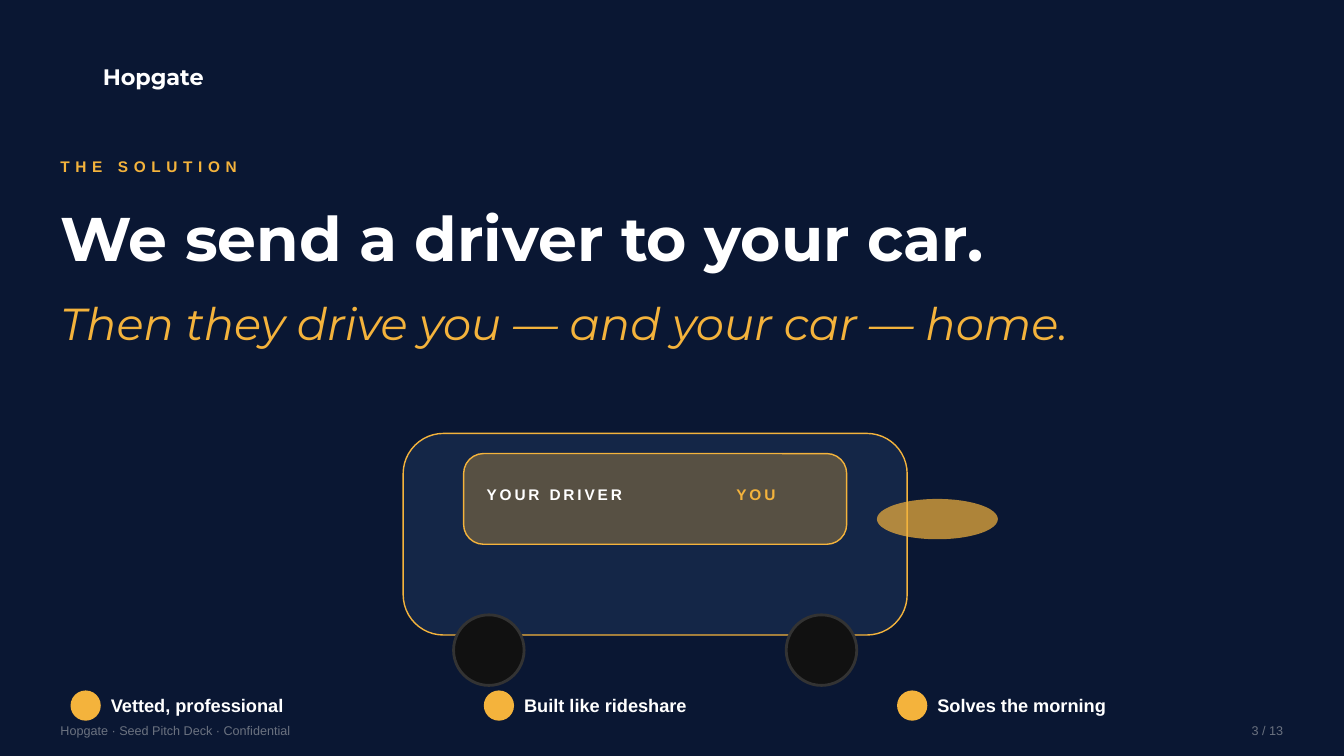
import pptx
import pptx.util
import pptx.dml.color
import pptx.enum.shapes
import pptx.enum.text
import lxml.etree

Pt = pptx.util.Pt
Kind = pptx.enum.shapes.MSO_SHAPE
Side = pptx.enum.text.PP_ALIGN
NS = "{http://schemas.openxmlformats.org/drawingml/2006/main}"
GOLD, WHITE, GREY = "F4B33C", "FFFFFF", "6B7280"


def hue(part, code):
    if hasattr(part, "solid"):
        part.solid()
        part = part.fore_color
    elif hasattr(part, "color"):
        part = part.color
    part.rgb = pptx.dml.color.RGBColor.from_string(code)


def text(words, box, size, code=WHITE, face="Arial", bold=True,
         slant=False, gap=0, side=Side.LEFT):
    frame = slide.shapes.add_textbox(*map(Pt, box)).text_frame
    frame.word_wrap = True
    frame.vertical_anchor = pptx.enum.text.MSO_ANCHOR.MIDDLE
    frame.margin_left = frame.margin_right = 0
    frame.margin_top = frame.margin_bottom = 0
    line = frame.paragraphs[0]
    line.alignment = side
    run = line.add_run()
    run.text = words
    font = run.font
    font.name, font.size = face, Pt(size)
    font.bold, font.italic = bold, slant
    hue(font, code)
    if gap:
        run._r.get_or_add_rPr().set("spc", str(gap * 100))


deck = pptx.Presentation()
deck.slide_width, deck.slide_height = Pt(960), Pt(540)
slide = deck.slides.add_slide(deck.slide_layouts[6])
hue(slide.background.fill, "0A1733")

body = (288, 309.6, 360, 144)
pane = (331.2, 324, 273.6, 64.8)
beam = (626.4, 356.4, 86.4, 28.8)
claims = ["Vetted, professional", "Built like rideshare", "Solves the morning"]
lefts = [50.4 + 295.2 * i for i in range(len(claims))]

parts = [
    (Kind.ROUNDED_RECTANGLE, body, "142647", 100, GOLD, 1, 0.2),
    (Kind.ROUNDED_RECTANGLE, pane, GOLD, 30, GOLD, 1, 0.22),
]
for left in (324, 561.6):
    wheel = (left, 439.2, 50.4, 50.4)
    parts.append((Kind.OVAL, wheel, "111111", 100, "333333", 2, None))
parts.append((Kind.OVAL, beam, GOLD, 70, None, 0, None))
for left in lefts:
    dot = (left, 493.2, 21.6, 21.6)
    parts.append((Kind.OVAL, dot, GOLD, 100, None, 0, None))

for kind, box, fill, alpha, edge, width, bend in parts:
    shape = slide.shapes.add_shape(kind, *map(Pt, box))
    shape.shadow.inherit = False
    hue(shape.fill, fill)
    if alpha < 100:
        tint = shape._element.spPr.find(f"{NS}solidFill/{NS}srgbClr")
        lxml.etree.SubElement(tint, NS + "alpha").set("val", str(alpha * 1000))
    if edge:
        hue(shape.line, edge)
        shape.line.width = Pt(width)
    else:
        shape.line.fill.background()
    if bend:
        shape.adjustments[0] = bend

text("Hopgate", (73.44, 41.76, 108, 25.92), 16, face="Montserrat")
text("THE SOLUTION", (43.2, 108, 432, 21.6), 11, GOLD, gap=4)
text("We send a driver to your car.", (43.2, 133.2, 864, 72), 44,
     face="Montserrat")
text("Then they drive you — and your car — home.", (43.2, 194.4, 864, 72), 32,
     GOLD, face="Montserrat", bold=False, slant=True)

for words, left, code in (("YOUR DRIVER", 338.4, WHITE), ("YOU", 482.4, GOLD)):
    text(words, (left, 331.2, 115.2, 43.2), 11, code, gap=2, side=Side.CENTER)

for words, left in zip(claims, lefts):
    text(words, (left + 28.8, 489.6, 252, 28.8), 13)

text("Hopgate · Seed Pitch Deck · Confidential", (43.2, 511.2, 576, 21.6), 9,
     GREY, bold=False)
text("3 / 13", (844.56, 511.2, 72, 21.6), 9, GREY, bold=False, side=Side.RIGHT)

deck.save("out.pptx")
